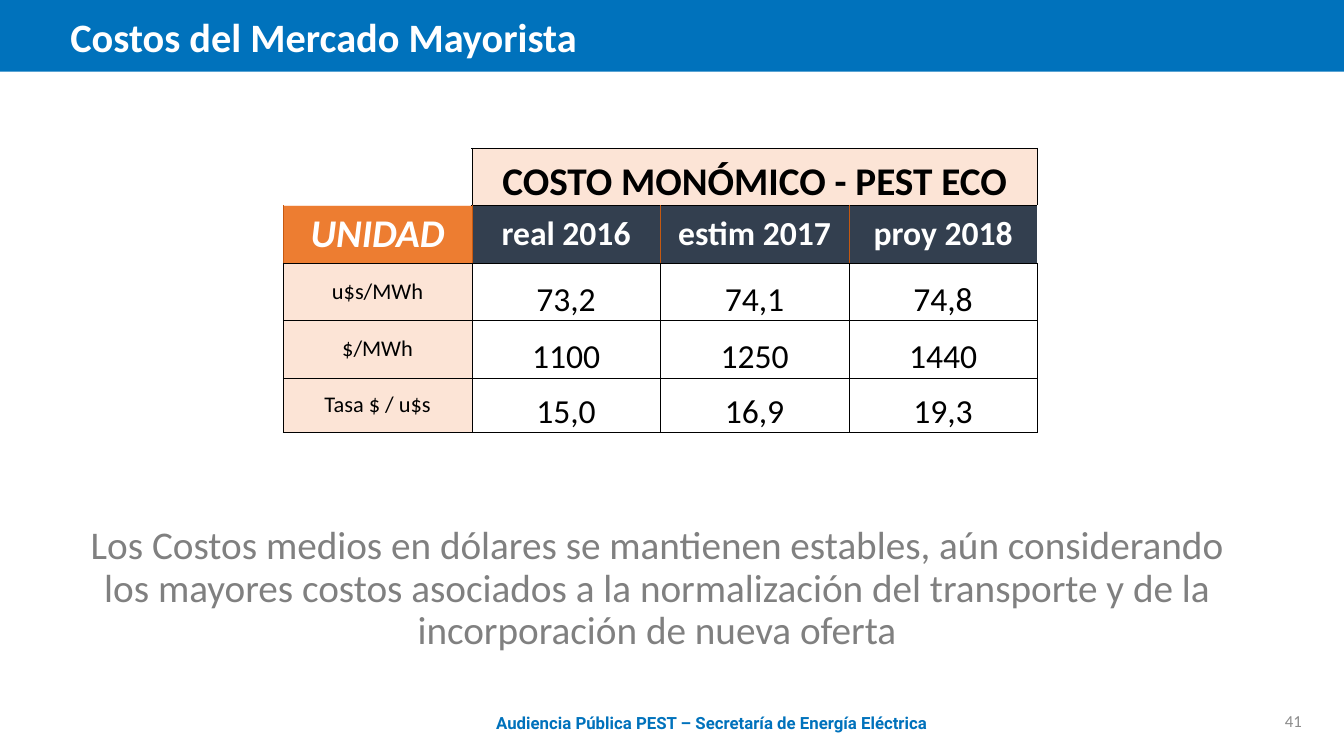
from lxml import etree
from pptx import Presentation
from pptx import util as u
from pptx.dml.color import RGBColor
from pptx.enum import shapes, text
from pptx.oxml.ns import qn

COLORS = {
    "blue": "0072BC", "white": "FFFFFF", "black": "000000", "grey": "808080",
    "page": "8C8C8C", "peach": "FCE4D6", "orange": "ED7D31", "rust": "C65911",
    "navy": "333F4F",
}
ROWS = [
    ["", "COSTO MONÓMICO - PEST ECO", "", ""],
    ["UNIDAD", "real 2016", "estim 2017", "proy 2018"],
    ["u$s/MWh", "73,2", "74,1", "74,8"],
    ["$/MWh", "1100", "1250", "1440"],
    ["Tasa $ / u$s", "15,0", "16,9", "19,3"],
]
ROW_HEIGHTS = [0.57, 0.57, 0.57, 0.57, 0.54]
GRID = {"L": "black", "R": "black", "T": "black", "B": "black"}
HEADING = {"L": "rust", "R": "rust", "T": "black", "B": "black"}
MIDDLE, BOTTOM = text.MSO_ANCHOR.MIDDLE, text.MSO_ANCHOR.BOTTOM
LEFT, CENTER, RIGHT = text.PP_ALIGN.LEFT, text.PP_ALIGN.CENTER, text.PP_ALIGN.RIGHT


def rgb(name):
    """Return the named colour."""
    return RGBColor.from_string(COLORS[name])


def write(frame, words, color, align=CENTER, spacing=1.0, **font):
    """Write one formatted paragraph into a text frame."""
    paragraph = frame.paragraphs[0]
    paragraph.alignment = align
    paragraph.line_spacing = spacing
    run = paragraph.add_run()
    run.text = words
    run.font.color.rgb = rgb(color)
    for name, value in {"name": "Calibri", "bold": False, **font}.items():
        setattr(run.font, name, u.Pt(value) if name == "size" else value)


def add_text(slide, box, words, color, anchor=MIDDLE, **style):
    """Place a wrapped text box."""
    frame = slide.shapes.add_textbox(*map(u.Inches, box)).text_frame
    frame.word_wrap = True
    frame.vertical_anchor = anchor
    write(frame, words, color, **style)


def add_header(slide, box):
    """Draw the title band with its title."""
    left, top, width, height = box
    band = slide.shapes.add_shape(shapes.MSO_SHAPE.RECTANGLE, *map(u.Inches, box))
    band.shadow.inherit = False
    band.fill.solid()
    band.fill.fore_color.rgb = rgb("blue")
    band.line.fill.background()
    add_text(slide, (left + 0.6, top + 0.1, 6.07, height - 0.13),
             "Costos del Mercado Mayorista", "white",
             align=LEFT, spacing=0.9, size=28.8, bold=True)


def set_borders(cell, borders):
    """Draw half-point cell borders, given as side to colour name."""
    properties = cell._tc.get_or_add_tcPr()
    for side in "LRTB":
        if side in borders:
            line = etree.SubElement(properties, qn(f"a:ln{side}"), w=str(u.Pt(0.5)))
            fill = etree.SubElement(line, qn("a:solidFill"))
            etree.SubElement(fill, qn("a:srgbClr"), val=COLORS[borders[side]])


def cell_format(row, column):
    """Return fill, borders, anchor and text style for a table position."""
    if row == 0 and column == 0:
        return None, {"R": "black", "B": "peach"}, MIDDLE, {}
    if row == 0:
        return "peach", GRID, BOTTOM, {"color": "black", "size": 28, "bold": True}
    if row == 1 and column == 0:
        style = {"color": "white", "size": 28, "bold": True, "italic": True}
        return "orange", {**HEADING, "T": "peach"}, MIDDLE, style
    if row == 1:
        borders = {side: color for side, color in HEADING.items()
                   if column < 3 or side != "R"}
        return "navy", borders, MIDDLE, {"color": "white", "size": 24, "bold": True}
    if column == 0:
        return "peach", GRID, MIDDLE, {"color": "black", "size": 16}
    return None, GRID, BOTTOM, {"color": "black", "size": 24}


def add_cost_table(slide, box):
    """Build the table of unit costs by year."""
    table = slide.shapes.add_table(len(ROWS), 4, *map(u.Inches, box)).table
    table.first_row = table.horz_banding = False
    for column in table.columns:
        column.width = u.Inches(box[2] / 4)
    for row, height in zip(table.rows, ROW_HEIGHTS):
        row.height = u.Inches(height)
    table.cell(0, 1).merge(table.cell(0, 3))
    for row, values in enumerate(ROWS):
        for column, value in enumerate(values):
            cell = table.cell(row, column)
            fill, borders, anchor, style = cell_format(row, column)
            set_borders(cell, borders)
            cell.vertical_anchor = anchor
            for side in ("left", "right", "top", "bottom"):
                setattr(cell, f"margin_{side}", 0)
            if fill:
                cell.fill.solid()
                cell.fill.fore_color.rgb = rgb(fill)
            else:
                cell.fill.background()
            if value:
                write(cell.text_frame, value, **style)


def add_conclusion(slide, box):
    """Place the closing statement."""
    add_text(slide, box,
             "Los Costos medios en dólares se mantienen estables, aún considerando "
             "los mayores costos asociados a la normalización del transporte y de la "
             "incorporación de nueva oferta",
             "grey", anchor=text.MSO_ANCHOR.TOP, spacing=0.9, size=28)


def add_footer(slide, box):
    """Place the footer line and the page number."""
    left, top, width, height = box
    add_text(slide, (left, top, 7.24, height),
             "Audiencia Pública PEST – Secretaría de Energía Eléctrica", "blue",
             name="Roboto", size=12, bold=True)
    add_text(slide, (left + width - 3, top + 0.05, 3, 0.4), "41", "page",
             align=RIGHT, size=12)


def main():
    """Build and save the slide."""
    presentation = Presentation()
    presentation.slide_width = u.Inches(13.33)
    presentation.slide_height = u.Inches(7.5)
    slide = presentation.slides.add_slide(presentation.slide_layouts[6])
    add_header(slide, (0, 0, 13.33, 0.71))
    add_cost_table(slide, (2.81, 1.47, 7.48, sum(ROW_HEIGHTS)))
    add_conclusion(slide, (0.74, 5.17, 11.55, 1.42))
    add_footer(slide, (3.44, 6.9, 9.57, 0.55))
    presentation.save("out.pptx")


if __name__ == "__main__":
    main()
